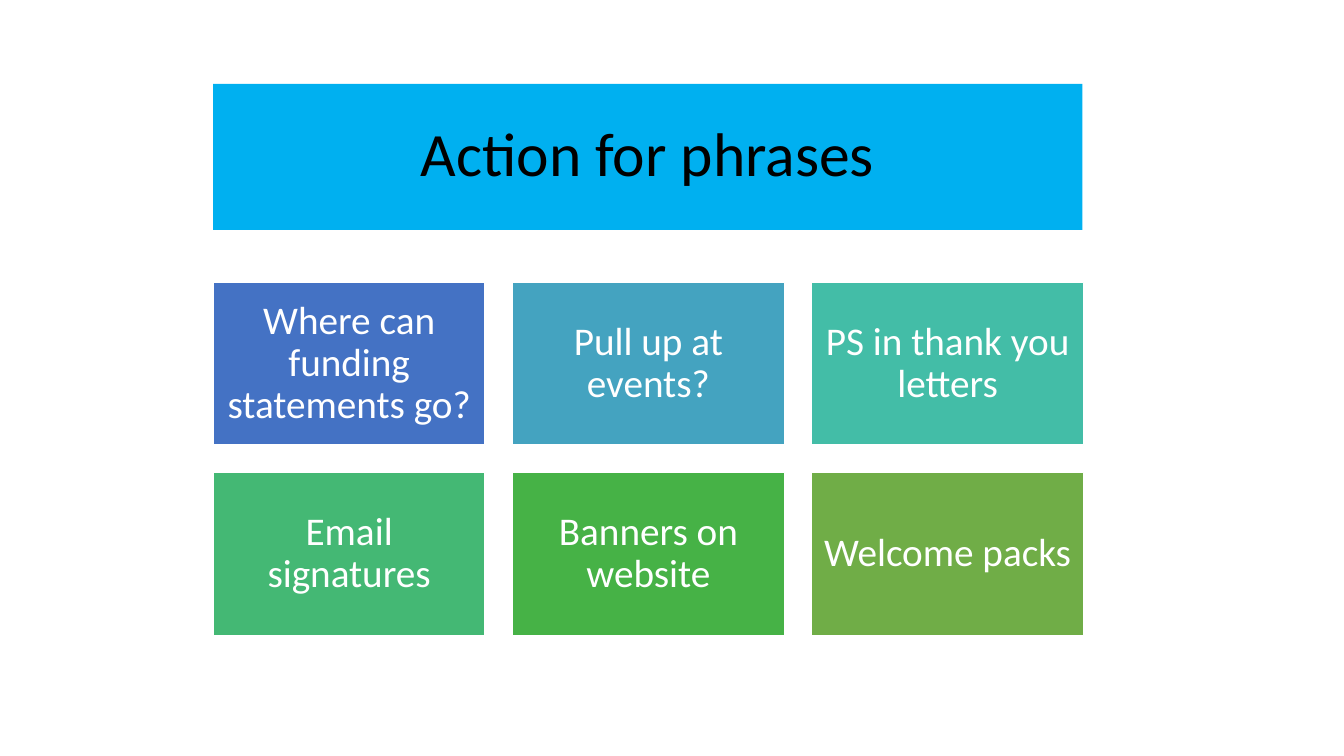
from pptx import Presentation
from pptx.dml.color import RGBColor
from pptx.enum.shapes import MSO_SHAPE
from pptx.enum.text import MSO_ANCHOR, PP_ALIGN
from pptx.util import Pt

PX = 9525
RECTANGLE = MSO_SHAPE.RECTANGLE
MIDDLE = MSO_ANCHOR.MIDDLE
CENTER = PP_ALIGN.CENTER

BLACK = RGBColor(0x00, 0x00, 0x00)
WHITE = RGBColor(0xFF, 0xFF, 0xFF)
SKY = RGBColor(0x00, 0xB0, 0xF0)
BLUE = RGBColor(0x44, 0x72, 0xC4)
CYAN = RGBColor(0x44, 0xA3, 0xC0)
TEAL = RGBColor(0x43, 0xBD, 0xA7)
MINT = RGBColor(0x44, 0xB8, 0x74)
GREEN = RGBColor(0x46, 0xB2, 0x46)
OLIVE = RGBColor(0x70, 0xAD, 0x47)

PLACES = [
    ("Where can funding statements go?", BLUE),
    ("Pull up at events?", CYAN),
    ("PS in thank you letters", TEAL),
    ("Email signatures", MINT),
    ("Banners on website", GREEN),
    ("Welcome packs", OLIVE),
]


def add_panel(page, box, text, fill, color, size):
    panel = page.shapes.add_shape(RECTANGLE, *(length * PX for length in box))
    panel.shadow.inherit = False
    panel.fill.solid()
    panel.fill.fore_color.rgb = fill
    panel.line.fill.background()
    frame = panel.text_frame
    frame.word_wrap = True
    frame.vertical_anchor = MIDDLE
    frame.margin_left = frame.margin_right = 11 * PX
    frame.margin_top = frame.margin_bottom = 11 * PX
    para = frame.paragraphs[0]
    para.alignment = CENTER
    para.line_spacing = 0.9
    span = para.add_run()
    span.text = text
    span.font.name = "Calibri"
    span.font.size = Pt(size)
    span.font.color.rgb = color
    return panel


def add_title(page, box):
    add_panel(page, box, "Action for phrases", SKY, BLACK, 44)


def add_tiles(page, box, columns=3, gap=26):
    left, top, width, height = box
    rows = len(PLACES) // columns
    tile_width = (width - gap * (columns - 1)) // columns
    tile_height = (height - gap * (rows - 1)) // rows
    for index, (text, fill) in enumerate(PLACES):
        row, column = divmod(index, columns)
        tile_box = (
            left + column * (tile_width + gap),
            top + row * (tile_height + gap),
            tile_width,
            tile_height,
        )
        tile = add_panel(page, tile_box, text, fill, WHITE, 28)
        tile.line.color.rgb = WHITE
        tile.line.width = Pt(1)


def main():
    deck = Presentation()
    deck.slide_width = 1280 * PX
    deck.slide_height = 720 * PX
    page = deck.slides.add_slide(deck.slide_layouts[6])
    add_title(page, (203, 80, 828, 139))
    add_tiles(page, (203, 269, 829, 336))
    deck.save("out.pptx")


if __name__ == "__main__":
    main()
